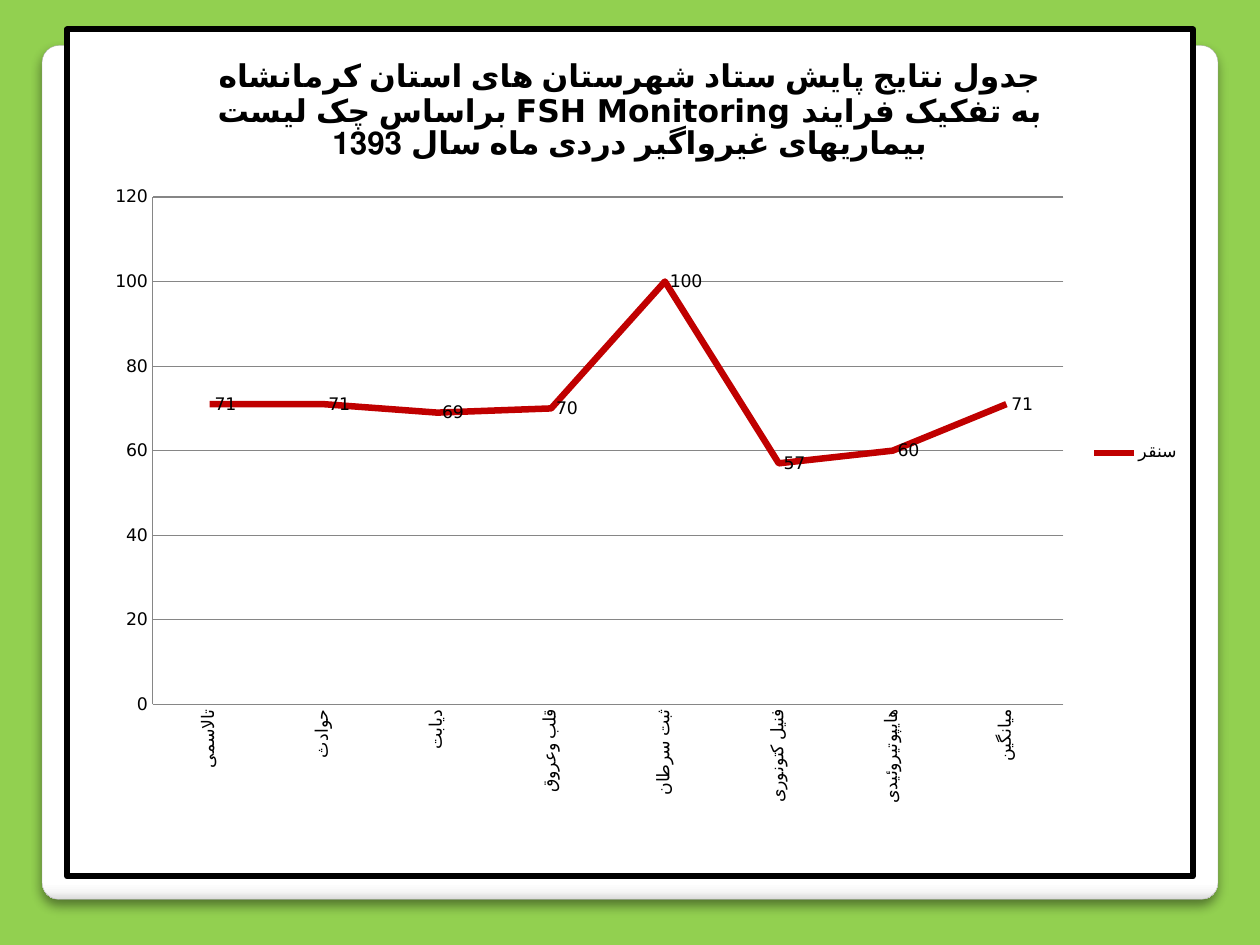
from dataclasses import dataclass

from lxml import etree
from pptx import Presentation
from pptx.chart.data import CategoryChartData as ChartData
from pptx.dml.color import RGBColor as Rgb
from pptx.enum.chart import XL_CHART_TYPE as Kind
from pptx.enum.chart import XL_LABEL_POSITION as Spot
from pptx.enum.chart import XL_LEGEND_POSITION as Side
from pptx.enum.chart import XL_MARKER_STYLE as Mark
from pptx.enum.chart import XL_TICK_MARK as Tick
from pptx.enum.shapes import MSO_SHAPE as Shape
from pptx.oxml import parse_xml
from pptx.oxml.ns import nsdecls, qn
from pptx.util import Pt


@dataclass
class Theme:
    back: str = "92D050"
    edge: str = "A4A4A4"
    paper: str = "FFFFFF"
    ink: str = "000000"
    grid: str = "868686"
    line: str = "C00000"
    face: str = "DejaVu Sans"
    head: int = 18
    body: int = 10


def rgb(code):
    return Rgb.from_string(code)


def style(font, size, bold=False):
    font.name = theme.face
    font.size = Pt(size)
    font.bold = bold
    font.color.rgb = rgb(theme.ink)


theme = Theme()
deck = Presentation()
deck.slide_width, deck.slide_height = Pt(720), Pt(540)
slide = deck.slides.add_slide(deck.slide_layouts[6])
slide.background.fill.solid()
slide.background.fill.fore_color.rgb = rgb(theme.back)

panel = slide.shapes.add_shape(Shape.ROUNDED_RECTANGLE, Pt(24), Pt(26), Pt(672), Pt(488))
panel.adjustments[0] = 0.02
panel.line.color.rgb = rgb(theme.edge)
panel.line.width = Pt(0.16)
fade = [(0, "FFFFFF"), (98, "FFFFFF"), (99, "F7F7F7"), (100, "DADADA")]
stops = "".join(
    f'<a:gs pos="{pos * 1000}"><a:srgbClr val="{code}"/></a:gs>' for pos, code in fade
)
props = panel.element.spPr
props.find(qn("a:prstGeom")).addnext(parse_xml(
    f'<a:gradFill {nsdecls("a")} rotWithShape="1"><a:gsLst>{stops}</a:gsLst>'
    '<a:lin ang="5400000" scaled="0"/></a:gradFill>'
))
props.append(parse_xml(
    f'<a:effectLst {nsdecls("a")}><a:outerShdw blurRad="{Pt(6)}" dist="{Pt(4)}" '
    f'dir="5400000" rotWithShape="0"><a:srgbClr val="{theme.ink}">'
    '<a:alpha val="44000"/></a:srgbClr></a:outerShdw></a:effectLst>'
))

scores = {
    "تالاسمی": 71,
    "حوادث": 71,
    "دیابت": 69,
    "قلب وعروق": 70,
    "ثبت سرطان": 100,
    "فنیل کتونوری": 57,
    "هایپوتیروئیدی": 60,
    "میانگین": 71,
}
data = ChartData()
data.categories = list(scores)
data.add_series("سنقر", list(scores.values()))
chart = slide.shapes.add_chart(
    Kind.LINE, Pt(36.7), Pt(15.1), Pt(646.6), Pt(487.4), data
).chart
style(chart.font, theme.body)

chart.has_title = True
chart.chart_title.include_in_layout = False
run = chart.chart_title.text_frame.paragraphs[0].add_run()
run.text = (
    "جدول نتایج پایش ستاد شهرستان های استان کرمانشاه براساس چک لیست "
    "FSH Monitoring به تفکیک فرایند بیماریهای غیرواگیر دردی ماه سال 1393"
)
style(run.font, theme.head, True)

chart.has_legend = True
chart.legend.position = Side.RIGHT
chart.legend.include_in_layout = False
style(chart.legend.font, theme.body)

names, scale = chart.category_axis, chart.value_axis
scale.minimum_scale, scale.maximum_scale, scale.major_unit = 0, 120, 20
scale.has_major_gridlines = True
for axis in (names, scale):
    axis.major_tick_mark = axis.minor_tick_mark = Tick.NONE
    style(axis.tick_labels.font, theme.body)
for part in (names, scale, scale.major_gridlines):
    part.format.line.color.rgb = rgb(theme.grid)
    part.format.line.width = Pt(0.75)
turn = names._element.find(qn("c:txPr")).find(qn("a:bodyPr"))
turn.set("rot", "-5400000")
turn.set("vert", "horz")

plot = chart.plots[0]
plot.vary_by_categories = False
trend = plot.series[0]
trend.smooth = False
trend.marker.style = Mark.NONE
trend.format.line.color.rgb = rgb(theme.line)
trend.format.line.width = Pt(3.75)
labels = trend.data_labels
labels.show_value = True
labels.position = Spot.RIGHT
style(labels.font, theme.body)

root = chart._chartSpace
area = root.chart.plotArea
for old in area.findall(qn("c:layout")):
    area.remove(old)
layout = parse_xml(f'<c:layout {nsdecls("c")}><c:manualLayout/></c:layout>')
rules = {
    "layoutTarget": "inner", "xMode": "edge", "yMode": "edge",
    "x": 0.076, "y": 0.198, "w": 0.809, "h": 0.599,
}
for tag, val in rules.items():
    etree.SubElement(layout[0], qn(f"c:{tag}")).set("val", str(val))
area.insert(0, layout)
root.chart.addnext(parse_xml(
    f'<c:spPr {nsdecls("c", "a")}>'
    f'<a:solidFill><a:srgbClr val="{theme.paper}"/></a:solidFill>'
    f'<a:ln w="{Pt(3.35)}"><a:solidFill><a:srgbClr val="{theme.ink}"/></a:solidFill>'
    '</a:ln></c:spPr>'
))

deck.save("out.pptx")
